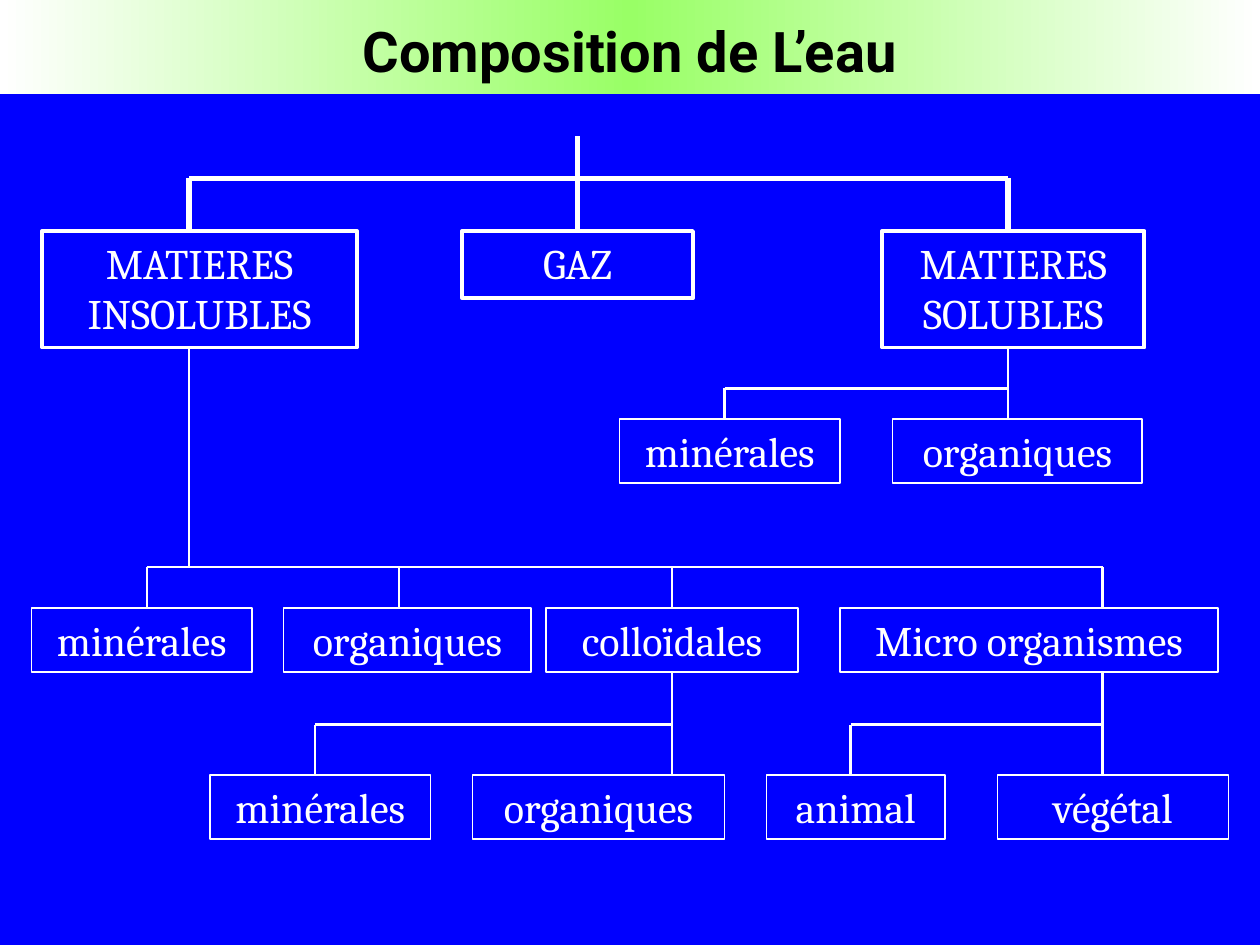
from copy import deepcopy
from pptx import Presentation
from pptx.dml.color import RGBColor
from pptx.enum.shapes import MSO_CONNECTOR, MSO_SHAPE
from pptx.enum.text import MSO_ANCHOR, MSO_AUTO_SIZE, PP_ALIGN
from pptx.oxml.ns import qn
from pptx.util import Inches, Pt
from lxml.etree import SubElement

COLORS = {"water": "0000FF", "ink": "FFFFFF", "band": "99FF66", "title": "000000"}
COLUMNS, ROWS = 120, 90
TITLE = "Composition de L’eau"


def node(text, left, width, stem, height=6.1, rail=None, row=None, children=()):
    return dict(text=text, left=left, width=width, stem=stem, height=height,
                rail=rail, row=row, children=children)


COLLOIDS = [node("minérales", 20, 21, 30), node("organiques", 45, 24, 64)]
MICROBES = [node("animal", 73, 17, 81), node("végétal", 95, 22, 105)]
SOLUBLES = [node("minérales", 59, 21, 69), node("organiques", 85, 23.8, 96)]
INSOLUBLES = [
    node("minérales", 3, 21, 14),
    node("organiques", 27, 23.6, 38),
    node("colloïdales", 52, 24, 64, rail=69, row=73.8, children=COLLOIDS),
    node("Micro organismes", 80, 36, 105, rail=69, row=73.8, children=MICROBES),
]
FAMILIES = [
    node("MATIERES INSOLUBLES", 4, 30, 18, 11.1, 54, 57.9, INSOLUBLES),
    node("GAZ", 44, 22, 55, 6.4),
    node("MATIERES SOLUBLES", 84, 25, 96, 11.1, 37, 39.9, SOLUBLES),
]
WATER = node(None, 55, 0, 55, 0, 17, 22, FAMILIES)
WATER_ROW = 13

prs = Presentation()
prs.slide_width, prs.slide_height = Inches(10), Inches(7.5)
slide = prs.slides.add_slide(prs.slide_layouts[5])


def color(name):
    return RGBColor.from_string(COLORS[name])


def x(columns):
    return round(prs.slide_width * columns / COLUMNS)


def y(rows):
    return round(prs.slide_height * rows / ROWS)


def write(shape, text, font, size, ink, bold=False):
    frame = shape.text_frame
    frame.text = text
    frame.word_wrap = True
    frame.auto_size = MSO_AUTO_SIZE.SHAPE_TO_FIT_TEXT
    frame.vertical_anchor = MSO_ANCHOR.TOP
    paragraph = frame.paragraphs[0]
    paragraph.alignment = PP_ALIGN.CENTER
    style = paragraph.runs[0].font
    style.name, style.size, style.bold = font, Pt(size), bold
    style.color.rgb = color(ink)


def add_box(item, row, weight):
    box = slide.shapes.add_shape(MSO_SHAPE.RECTANGLE, x(item["left"]), y(row),
                                 x(item["width"]), y(item["height"]))
    box.shadow.inherit = False
    box.fill.solid()
    box.fill.fore_color.rgb = color("water")
    box.line.color.rgb = color("ink")
    box.line.width = Pt(weight)
    write(box, item["text"], "Cambria", 24, "ink")
    return box


def add_line(start, end, weight):
    line = slide.shapes.add_connector(MSO_CONNECTOR.STRAIGHT, x(start[0]), y(start[1]),
                                      x(end[0]), y(end[1]))
    line.line.color.rgb = color("ink")
    line.line.width = Pt(weight)
    SubElement(line._element.spPr, qn("a:effectLst"))
    return line


def is_centred(item):
    return item["left"] + item["width"] / 2 == item["stem"]


def add_branch(parent, bottom, parent_box=None, box_weight=1, line_weight=1.5):
    stem, rail, row = parent["stem"], parent["rail"], parent["row"]
    trunk = add_line((stem, bottom), (stem, rail), line_weight)
    if parent_box is not None and is_centred(parent):
        trunk.begin_connect(parent_box, 2)
    stems = [child["stem"] for child in parent["children"]] + [stem]
    add_line((min(stems), rail), (max(stems), rail), line_weight)
    for child in parent["children"]:
        box = add_box(child, row, box_weight)
        drop = add_line((child["stem"], rail), (child["stem"], row), line_weight)
        if is_centred(child):
            drop.end_connect(box, 0)
        if child["children"]:
            add_branch(child, row + child["height"], box)


slide.background.fill.solid()
slide.background.fill.fore_color.rgb = color("water")

band = slide.shapes.add_shape(MSO_SHAPE.RECTANGLE, 0, 0, x(COLUMNS), y(9))
band.shadow.inherit = False
band.line.fill.background()
band.fill.gradient()
band.fill.gradient_angle = 0
first_stop = band.fill.gradient_stops[0]._gs
first_stop.addnext(deepcopy(first_stop))
for stop, (position, name) in zip(band.fill.gradient_stops,
                                  [(0, "ink"), (0.5, "band"), (1, "ink")]):
    stop.position = position
    stop.color.rgb = color(name)

add_branch(WATER, WATER_ROW, box_weight=2.25, line_weight=3)

title = slide.shapes.title
title.left, title.top, title.width, title.height = x(14), y(1), x(92), y(7.7)
write(title, TITLE, "Roboto", 32, "title", bold=True)
slide.shapes._spTree.append(title._element)

prs.save("out.pptx")
